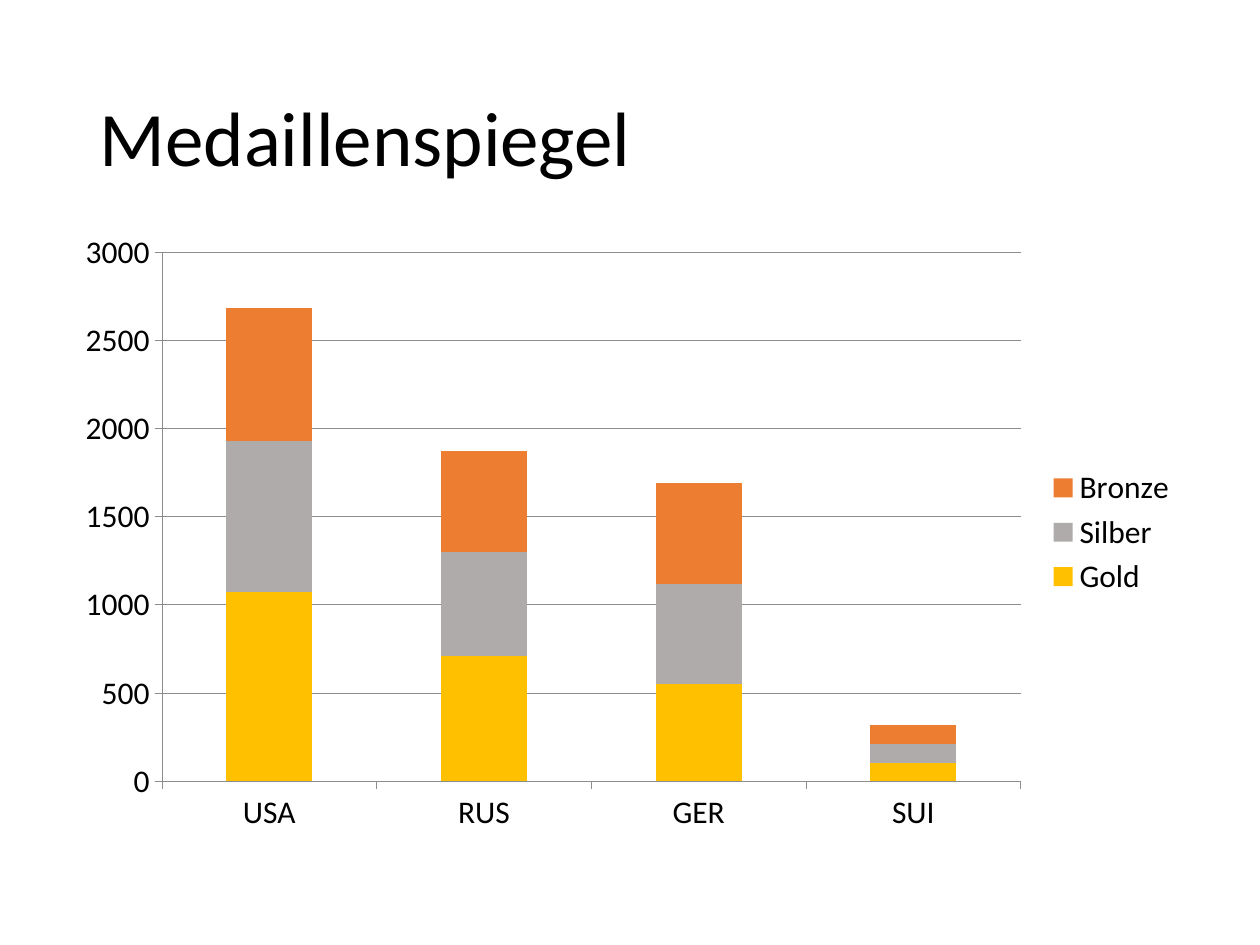
from dataclasses import dataclass

from pptx import Presentation
from pptx import util as u
from pptx.chart.data import CategoryChartData
from pptx.dml.color import RGBColor
from pptx.enum import chart as charts, text

TITLE = "Medaillenspiegel"
COUNTRIES = ["USA", "RUS", "GER", "SUI"]
MEDALS = [
    ("Gold ", [1070, 710, 550, 100], "FFC000"),
    ("Silber ", [860, 590, 570, 110], "AFABAB"),
    ("Bronze ", [750, 570, 570, 110], "ED7D31"),
]
TITLE_BOX = (0.69, 0.4, 8.62, 1.45)
CHART_BOX = (0.5, 1.75, 9, 4.95)


@dataclass(frozen=True)
class Theme:
    font: str = "Calibri"
    ink: str = "000000"
    rule: str = "8C8C8C"
    title_size: int = 44
    chart_size: int = 18
    rule_width: float = 0.5


THEME = Theme()


def inches(box):
    return [u.Inches(length) for length in box]


def style_font(font, size):
    font.name = THEME.font
    font.size = u.Pt(size)
    font.bold = False
    font.color.rgb = RGBColor.from_string(THEME.ink)


def style_line(line):
    line.color.rgb = RGBColor.from_string(THEME.rule)
    line.width = u.Pt(THEME.rule_width)


def write_title(shape, words, *, box, size):
    shape.left, shape.top, shape.width, shape.height = inches(box)
    frame = shape.text_frame
    frame.word_wrap = True
    frame.auto_size = text.MSO_AUTO_SIZE.NONE
    frame.vertical_anchor = text.MSO_ANCHOR.MIDDLE
    para = frame.paragraphs[0]
    para.alignment = text.PP_ALIGN.LEFT
    para.line_spacing = 0.9
    span = para.add_run()
    span.text = words
    style_font(span.font, size)


def add_medal_chart(page):
    data = CategoryChartData(number_format="General")
    data.categories = COUNTRIES
    for name, values, _ in MEDALS:
        data.add_series(name, values)
    chart = page.shapes.add_chart(
        charts.XL_CHART_TYPE.COLUMN_STACKED, *inches(CHART_BOX), data
    ).chart
    chart.has_title = False
    style_font(chart.font, THEME.chart_size)

    plot = chart.plots[0]
    plot.gap_width = 150
    plot.overlap = 100
    plot.vary_by_categories = False
    for series, (_, _, color) in zip(plot.series, MEDALS):
        series.format.fill.solid()
        series.format.fill.fore_color.rgb = RGBColor.from_string(color)

    for axis in (chart.category_axis, chart.value_axis):
        axis.major_tick_mark = charts.XL_TICK_MARK.OUTSIDE
        axis.minor_tick_mark = charts.XL_TICK_MARK.NONE
        style_font(axis.tick_labels.font, THEME.chart_size)
        style_line(axis.format.line)
    chart.value_axis.has_major_gridlines = True
    style_line(chart.value_axis.major_gridlines.format.line)

    chart.has_legend = True
    chart.legend.position = charts.XL_LEGEND_POSITION.RIGHT
    chart.legend.include_in_layout = False
    style_font(chart.legend.font, THEME.chart_size)


def main():
    deck = Presentation()
    deck.slide_width, deck.slide_height = u.Inches(10), u.Inches(7.5)
    page = deck.slides.add_slide(deck.slide_layouts.get_by_name("Title Only"))
    write_title(page.shapes.title, TITLE, box=TITLE_BOX, size=THEME.title_size)
    add_medal_chart(page)
    deck.save("out.pptx")


if __name__ == "__main__":
    main()
